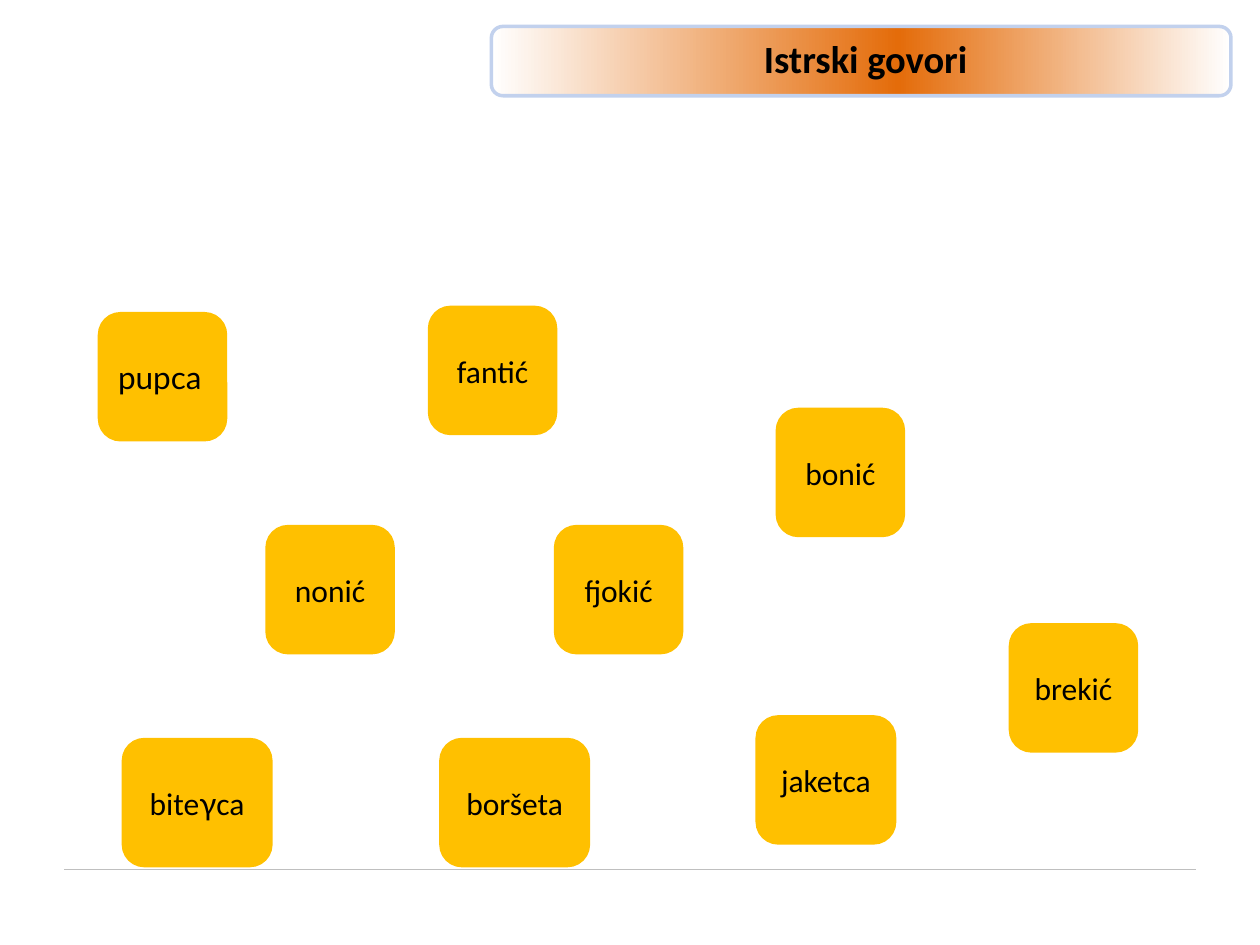
import copy

import pptx
import pptx.dml.color
import pptx.enum.shapes
import pptx.enum.text
import pptx.oxml.ns
import pptx.oxml.xmlchemy
import pptx.util
from pptx.util import Inches

RGBColor = pptx.dml.color.RGBColor
BLACK = RGBColor(0x00, 0x00, 0x00)
WHITE = RGBColor(0xFF, 0xFF, 0xFF)
ORANGE = RGBColor(0xE4, 0x6C, 0x0A)
PALE_BLUE = RGBColor(0xC2, 0xD1, 0xED)
AMBER = RGBColor(0xFF, 0xC0, 0x00)
GREY = RGBColor(0xBF, 0xBF, 0xBF)

ALIGN = pptx.enum.text.PP_ALIGN
ANCHOR = pptx.enum.text.MSO_ANCHOR
BODY_FONT = "Calibri"
ACCENT_FONT = "Lato"

CENTRED_WORDS = [
    ("fantić", 3.41, 2.44, 1),
    ("bonić", 6.17, 3.25, 1),
    ("nonić", 2.12, 4.18, 1),
    ("boršeta", 3.5, 5.87, 1.17),
    ("fjokić", 4.41, 4.18, 1),
    ("brekić", 8.02, 4.96, 1),
    ("jaketca", 6.01, 5.69, 1.09),
]


def add_footer_rule(slide, left, top, width):
    """Draw the thin grey rule above the footer."""
    rule = slide.shapes.add_connector(
        pptx.enum.shapes.MSO_CONNECTOR.STRAIGHT, left, top, left + width, top
    )
    rule.line.color.rgb = GREY
    rule.line.width = pptx.util.Pt(0.75)
    properties = rule.element.spPr
    properties.append(pptx.oxml.xmlchemy.OxmlElement("a:effectLst"))


def add_rounded_box(slide, left, top, width, height, line_color):
    """Add a rounded rectangle without shadow and return it."""
    shape = slide.shapes.add_shape(
        pptx.enum.shapes.MSO_SHAPE.ROUNDED_RECTANGLE, left, top, width, height
    )
    shape.shadow.inherit = False
    shape.line.color.rgb = line_color
    shape.line.width = pptx.util.Pt(2)
    return shape


def fill_with_gradient(shape, stops):
    """Fill a shape from left to right with three (position, color) stops."""
    shape.fill.gradient()
    shape.fill.gradient_angle = 0
    stop_list = shape.element.spPr.find(".//" + pptx.oxml.ns.qn("a:gsLst"))
    stop_list.append(copy.deepcopy(stop_list[0]))
    for gradient_stop, (position, color) in zip(shape.fill.gradient_stops, stops):
        gradient_stop.position = position
        gradient_stop.color.rgb = color


def add_title_banner(slide, left, top, width, height):
    """Place the gradient banner with the slide title in front of it."""
    banner = add_rounded_box(slide, left, top, width, height, PALE_BLUE)
    fill_with_gradient(banner, [(0, WHITE), (0.55, ORANGE), (1, WHITE)])

    title = slide.shapes.title
    title.left, title.top = left + Inches(0.01), top + Inches(0.02)
    title.width, title.height = width + Inches(0.05), Inches(0.47)
    banner.element.addnext(title.element)
    title.text_frame.text = "Istrski govori"
    title.text_frame.vertical_anchor = ANCHOR.TOP
    paragraph = title.text_frame.paragraphs[0]
    paragraph.alignment = ALIGN.CENTER
    paragraph.font.name = BODY_FONT
    paragraph.font.size = pptx.util.Pt(22)
    paragraph.font.bold = True
    paragraph.font.color.rgb = BLACK


def add_word_card(slide, text, left, top, width, font=BODY_FONT, align=ALIGN.CENTER):
    """Add an amber card, one inch high, and return its paragraph."""
    card = add_rounded_box(slide, left, top, width, Inches(1), AMBER)
    card.fill.solid()
    card.fill.fore_color.rgb = AMBER
    card.text_frame.vertical_anchor = ANCHOR.MIDDLE
    paragraph = card.text_frame.paragraphs[0]
    paragraph.text = text
    paragraph.alignment = align
    paragraph.font.name = font
    paragraph.font.size = pptx.util.Pt(18)
    paragraph.font.color.rgb = BLACK
    return paragraph


def add_word_cards(slide):
    """Scatter the dialect words over the slide."""
    add_word_card(
        slide, "pupca", Inches(0.79), Inches(2.49), Inches(1), ACCENT_FONT, ALIGN.LEFT
    )
    for text, left, top, width in CENTRED_WORDS:
        add_word_card(slide, text, Inches(left), Inches(top), Inches(width))
    paragraph = add_word_card(slide, "bite", Inches(0.98), Inches(5.87), Inches(1.17))
    gamma = paragraph.add_run()
    gamma.text = "γ"
    gamma.font.name = ACCENT_FONT
    paragraph.add_run().text = "ca"


def main():
    """Build and save the presentation."""
    presentation = pptx.Presentation()
    presentation.slide_width = Inches(10)
    presentation.slide_height = Inches(7.5)
    slide = presentation.slides.add_slide(
        presentation.slide_layouts.get_by_name("Title Only")
    )
    add_footer_rule(slide, Inches(0.51), Inches(6.9), Inches(8.98))
    add_title_banner(slide, Inches(3.9), Inches(0.21), Inches(5.87), Inches(0.55))
    add_word_cards(slide)
    presentation.save("out.pptx")


if __name__ == "__main__":
    main()
